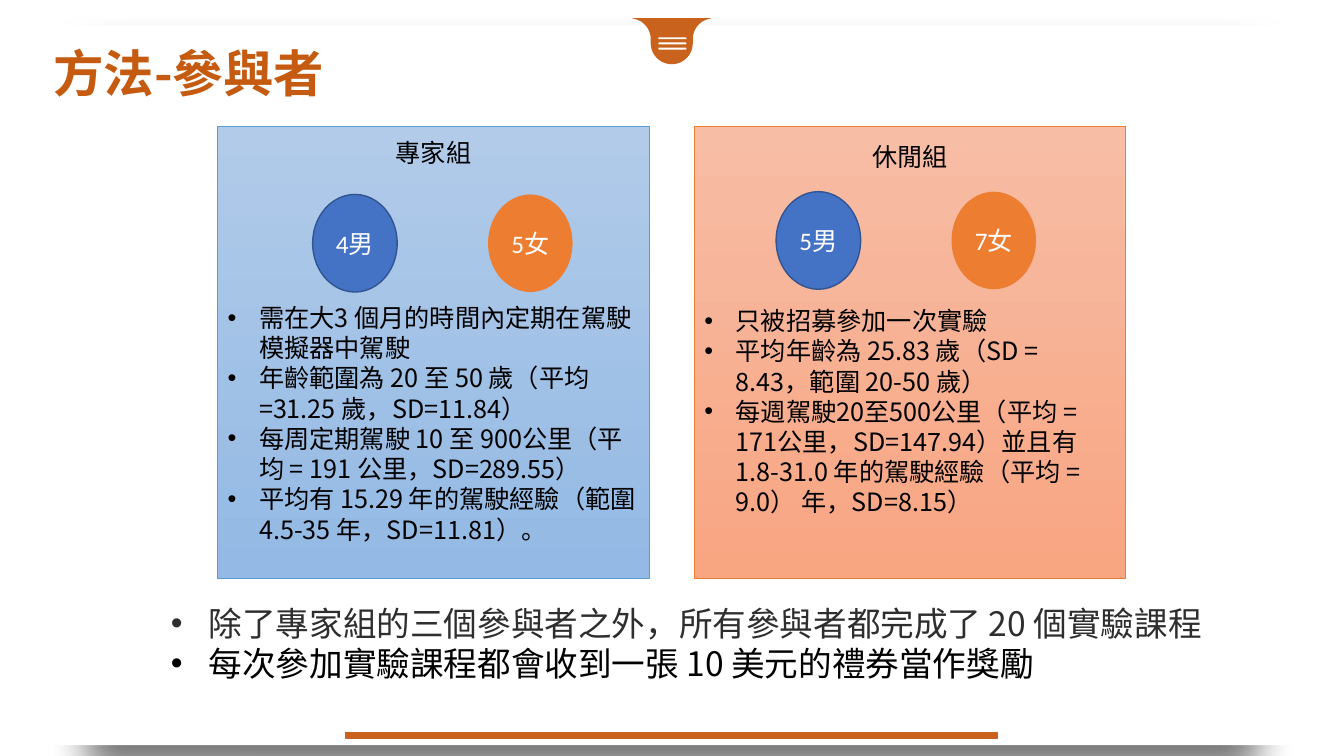
import pptx
import pptx.util
import pptx.dml.color
import pptx.enum.shapes
import pptx.enum.text
import pptx.oxml
import pptx.oxml.ns
import lxml.etree
import math

Cm = pptx.util.Cm
MSO = pptx.enum.shapes.MSO_SHAPE
ALIGN = pptx.enum.text.PP_ALIGN
ANCHOR = pptx.enum.text.MSO_ANCHOR
RUST, WHITE, BLACK, ORANGE = "C8621C", "FFFFFF", "000000", "ED7D31"
CJK = "Noto Sans CJK SC"


def paint(sp, fill, line=None, width=1):
    sp.shadow.inherit = False
    if isinstance(fill, tuple):
        sp.fill.gradient()
        sp.fill.gradient_angle = 270
        for stop, color in zip(sp.fill.gradient_stops, fill):
            stop.color.rgb = pptx.dml.color.RGBColor.from_string(color)
    else:
        sp.fill.solid()
        sp.fill.fore_color.rgb = pptx.dml.color.RGBColor.from_string(fill)
    if line:
        sp.line.color.rgb = pptx.dml.color.RGBColor.from_string(line)
        sp.line.width = pptx.util.Pt(width)
    else:
        sp.line.fill.background()


def write(sp, lines, size, colors, align=ALIGN.LEFT, indent=0, font=CJK, bold=False):
    tf = sp.text_frame
    tf.word_wrap = True
    tf.text = "\n".join(lines)
    for i, p in enumerate(tf.paragraphs):
        p.alignment = align
        if indent:
            pPr = p._p.get_or_add_pPr()
            pPr.set("marL", str(Cm(indent)))
            pPr.set("indent", str(-Cm(indent)))
            bullet = lxml.etree.SubElement(pPr, pptx.oxml.ns.qn("a:buFont"))
            bullet.set("typeface", "Arial")
            bullet = lxml.etree.SubElement(pPr, pptx.oxml.ns.qn("a:buChar"))
            bullet.set("char", "•")
        for r in p.runs:
            r.font.size = pptx.util.Pt(size)
            r.font.bold = bold
            r.font.name = font
            r.font.color.rgb = pptx.dml.color.RGBColor.from_string(colors[i % len(colors)])
            ea = lxml.etree.SubElement(r._r.get_or_add_rPr(), pptx.oxml.ns.qn("a:ea"))
            ea.set("typeface", CJK)


prs = pptx.Presentation()
prs.slide_width, prs.slide_height = Cm(33.87), Cm(19.05)
s = prs.slides.add_slide(prs.slide_layouts[5])
shapes = s.shapes

card = shapes.add_shape(MSO.ROUNDED_RECTANGLE, Cm(0.56), Cm(0.64), Cm(32.77), Cm(18.14))
card.adjustments[0] = 0.02
paint(card, WHITE)
effects = card._element.spPr.find(pptx.oxml.ns.qn("a:effectLst"))
effects.append(pptx.oxml.parse_xml(
    '<a:outerShdw xmlns:a="http://schemas.openxmlformats.org/drawingml/2006/main" '
    'blurRad="342900" dist="241300" dir="5400000" sx="90000" algn="t" rotWithShape="0">'
    '<a:srgbClr val="000000"><a:alpha val="55000"/></a:srgbClr></a:outerShdw>'))

half = [(1, 0.46)]
for i in range(13):
    t = i / 12
    weights = ((1 - t) ** 3, 3 * t * (1 - t) ** 2, 3 * t * t * (1 - t), t ** 3)
    half.append((sum(w * x for w, x in zip(weights, (0.93, 0.7, 0.53, 0.53))),
                 sum(w * y for w, y in zip(weights, (0.48, 0.53, 0.74, 0.99)))))
for i in range(13):
    angle = math.pi / 2 * i / 12
    half.append((0.53 * math.cos(angle), 1.09 + 0.53 * math.sin(angle)))
outline = half + [(-x, y) for x, y in reversed(half)]
points = [(Cm(16.93 + x), Cm(y)) for x, y in outline]
builder = shapes.build_freeform(*points[0])
builder.add_line_segments(points[1:])
paint(builder.convert_to_shape(), RUST)

for i in range(3):
    bar = shapes.add_shape(MSO.ROUNDED_RECTANGLE, Cm(16.59), Cm(0.94 + 0.13 * i), Cm(0.71), Cm(0.05))
    bar.adjustments[0] = 0.5
    paint(bar, WHITE)

rule = shapes.add_shape(MSO.RECTANGLE, Cm(8.71), Cm(18.47), Cm(16.43), Cm(0.13))
paint(rule, RUST, RUST)

title = shapes.title
shapes._spTree.append(title._element)
title.left, title.top, title.width, title.height = Cm(1.09), Cm(0.18), Cm(9.04), Cm(2.29)
write(title, ["方法-參與者"], 36, ["C55A11"], bold=True)
title.text_frame.vertical_anchor = ANCHOR.TOP
title.text_frame.paragraphs[0].line_spacing = 1.5

groups = [
    (5.49, ("B1CBE9", "93B9E4"), "5B9BD5", "專家組", 3.33, 2.39, 4.9, ("4男", "5女"), 7.49, [
        "需在大3 個月的時間內定期在駕駛模擬器中駕駛",
        "年齡範圍為 20 至 50 歲（平均=31.25 歲，SD=11.84）",
        "每周定期駕駛 10 至 900公里（平均 = 191 公里，SD=289.55）",
        "平均有 15.29 年的駕駛經驗（範圍 4.5-35 年，SD=11.81）。"]),
    (17.5, ("F7BDA5", "F8A582"), ORANGE, "休閒組", 3.43, 2.06, 4.83, ("5男", "7女"), 7.57, [
        "只被招募參加一次實驗",
        "平均年齡為 25.83 歲（SD = 8.43，範圍 20-50 歲）",
        "每週駕駛20至500公里（平均 = 171公里，SD=147.94）並且有 1.8-31.0 年的駕駛經驗（平均 = 9.0） 年，SD=8.15）"]),
]
for left, fade, edge, name, name_top, oval_x, oval_y, counts, facts_top, facts in groups:
    panel = shapes.add_shape(MSO.RECTANGLE, Cm(left), Cm(3.18), Cm(10.87), Cm(11.4))
    paint(panel, fade, edge, 0.5)
    heading = shapes.add_textbox(Cm(left + 3.82), Cm(name_top), Cm(3.23), Cm(1.1))
    write(heading, [name], 18, [BLACK], ALIGN.CENTER)
    for i, (count, fill, line) in enumerate(zip(counts, ("4472C4", ORANGE), ("325491", None))):
        oval = shapes.add_shape(MSO.OVAL, Cm(left + oval_x + 4.42 * i), Cm(oval_y), Cm(2.13), Cm(2.46))
        paint(oval, fill, line)
        write(oval, [count], 18, [WHITE], ALIGN.CENTER, font="Calibri")
        oval.text_frame.vertical_anchor = ANCHOR.MIDDLE
    details = shapes.add_textbox(Cm(left), Cm(facts_top), Cm(10.87), Cm(6.5))
    write(details, facts, 18, [BLACK], indent=0.79)

summary = shapes.add_textbox(Cm(4.06), Cm(15.06), Cm(28.04), Cm(2.31))
write(summary, ["除了專家組的三個參與者之外，所有參與者都完成了 20 個實驗課程",
                "每次參加實驗課程都會收到一張 10 美元的禮券當作獎勵"],
      24, ["2E2E2E", BLACK], indent=0.95)

prs.save("out.pptx")
